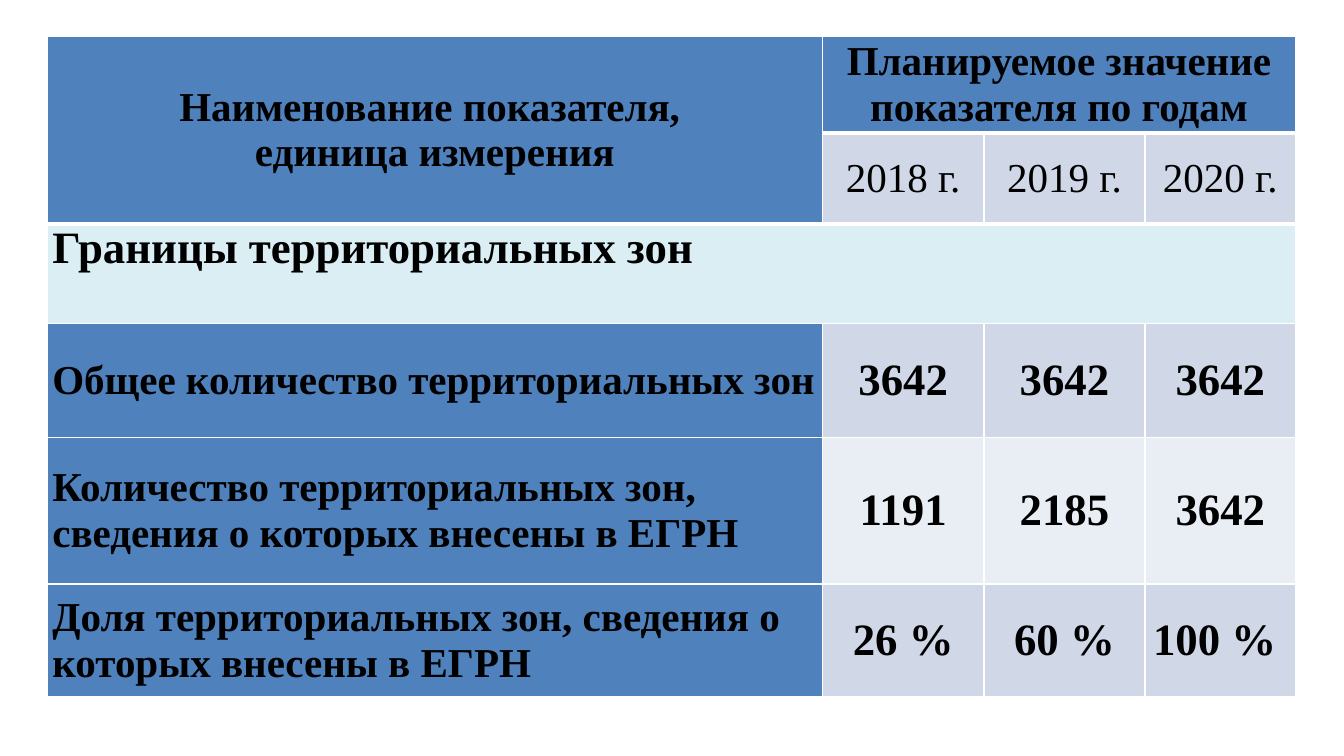
from lxml import etree
from pptx import Presentation
from pptx.dml.color import RGBColor
from pptx.enum.text import MSO_ANCHOR, PP_ALIGN
from pptx.oxml.ns import qn
from pptx.util import Inches, Pt

LEFT, CENTER, JUSTIFY = PP_ALIGN.LEFT, PP_ALIGN.CENTER, PP_ALIGN.JUSTIFY
TOP, MIDDLE = MSO_ANCHOR.TOP, MSO_ANCHOR.MIDDLE
BLACK = RGBColor(0x00, 0x00, 0x00)
WHITE = RGBColor(0xFF, 0xFF, 0xFF)
BLUE = RGBColor(0x4F, 0x81, 0xBD)
AQUA = RGBColor(0xDB, 0xEE, 0xF4)
BAND = RGBColor(0xD0, 0xD8, 0xE8)
PALE = RGBColor(0xE9, 0xED, 0xF4)

WIDTHS = [5.77, 1.2, 1.2, 1.12]
HEIGHTS = [0.72, 0.67, 0.74, 0.85, 1.09, 0.84]
YEARS = ["2018 г.", "2019 г.", "2020 г."]
DATA = [
    ("Общее количество территориальных зон", "3642", "3642", "3642"),
    ("Количество территориальных зон, сведения о которых внесены в ЕГРН",
     "1191", "2185", "3642"),
    ("Доля территориальных зон, сведения о которых внесены в ЕГРН",
     "26 %", "60 %", "100 % "),
]


def write(cell, text, fill=BLUE, size=22, bold=True, align=CENTER, anchor=MIDDLE):
    cell.fill.solid()
    cell.fill.fore_color.rgb = fill
    cell.vertical_anchor = anchor
    para = cell.text_frame.paragraphs[0]
    para.alignment = align
    for i, line in enumerate(text.split("\n")):
        if i:
            para.add_line_break()
        run = para.add_run()
        run.text = line
        font = run.font
        font.name, font.size, font.bold = "Times New Roman", Pt(size), bold
        font.color.rgb = BLACK


def edge(cell, side, width):
    """Draw one white border; side is L, R, T or B."""
    props = cell._tc.get_or_add_tcPr()
    line = etree.SubElement(props, qn(f"a:ln{side}"), w=str(Pt(width)))
    paint = etree.SubElement(line, qn("a:solidFill"))
    etree.SubElement(paint, qn("a:srgbClr"), val=str(WHITE))


prs = Presentation()
prs.slide_width = Inches(10)
prs.slide_height = prs.slide_width * 9 // 16
slide = prs.slides.add_slide(prs.slide_layouts[6])

frame = slide.shapes.add_table(
    len(HEIGHTS), len(WIDTHS), Inches(0.35), Inches(0.27),
    Inches(sum(WIDTHS)), Inches(sum(HEIGHTS)))
table = frame.table
for col, width in zip(table.columns, WIDTHS):
    col.width = Inches(width)
for row, height in zip(table.rows, HEIGHTS):
    row.height = Inches(height)

# Borders go in ahead of the fills, with thick rules under both header rows
for r in range(len(HEIGHTS)):
    for c in range(len(WIDTHS)):
        cell = table.cell(r, c)
        cell.margin_left = cell.margin_right = Inches(0.04)
        cell.margin_top = cell.margin_bottom = 0
        edge(cell, "L", 1)
        edge(cell, "R", 1)
        edge(cell, "T", 3 if r in (1, 2) else 1)
        edge(cell, "B", 3 if r in (0, 1) else 1)

table.cell(0, 0).merge(table.cell(1, 0))
table.cell(0, 1).merge(table.cell(0, 3))
table.cell(2, 0).merge(table.cell(2, 3))

write(table.cell(0, 0), "Наименование показателя, \nединица измерения")
write(table.cell(0, 1), "Планируемое значение показателя по годам")
for c, year in enumerate(YEARS, 1):
    write(table.cell(1, c), year, fill=BAND, bold=False)
write(table.cell(2, 0), "Границы территориальных зон",
      fill=AQUA, size=24, align=JUSTIFY, anchor=TOP)

for r, (name, *values) in enumerate(DATA, 3):
    write(table.cell(r, 0), name, align=LEFT)
    for c, value in enumerate(values, 1):
        write(table.cell(r, c), value, fill=BAND if r % 2 else PALE, size=24)

prs.save("out.pptx")
